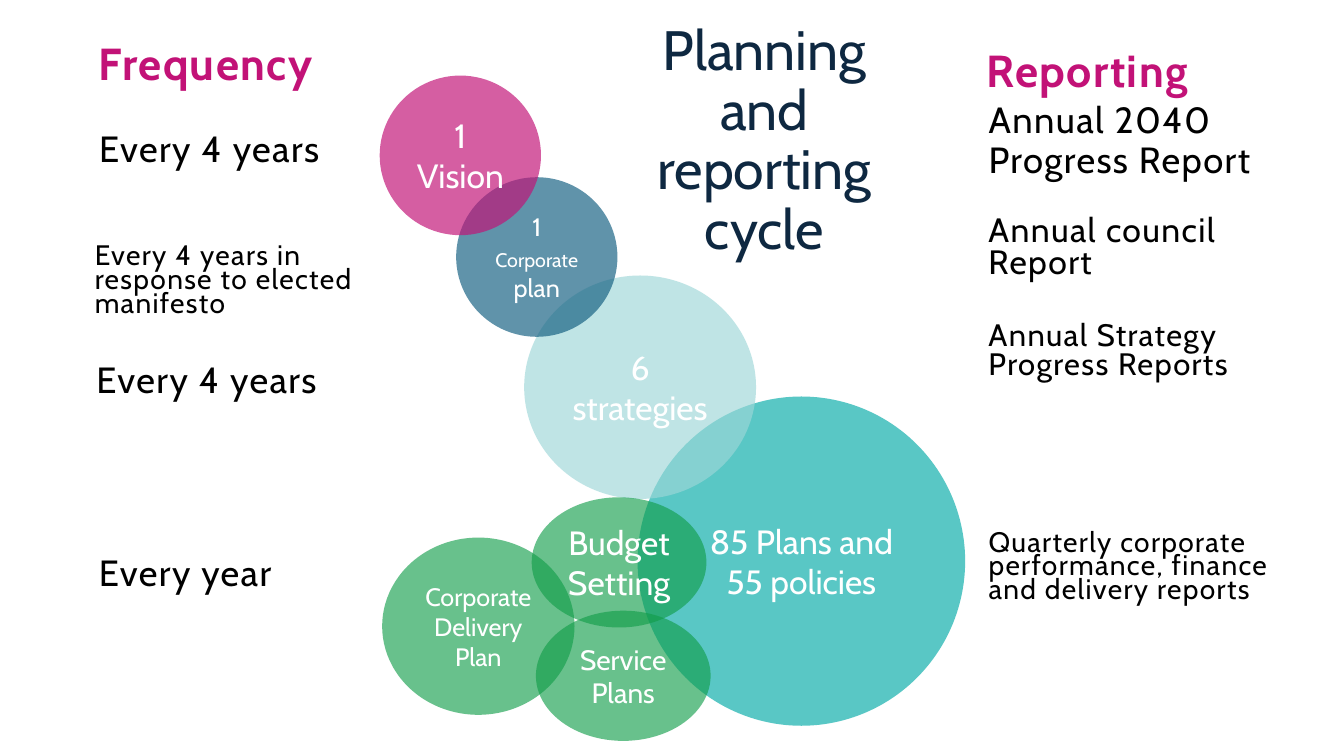
from lxml.etree import SubElement
from pptx import Presentation
from pptx.dml.color import RGBColor
from pptx.enum.shapes import MSO_SHAPE as Preset
from pptx.enum.text import MSO_ANCHOR as Anchor, MSO_AUTO_SIZE as AutoSize, PP_ALIGN as Align
from pptx.oxml.ns import qn
from pptx.util import Inches, Pt

COLORS = {
    "black": "000000", "white": "FFFFFF", "navy": "0E2841", "pink": "C21277",
    "blue": "156082", "pale": "9DD7D8", "teal": "00A9A6", "green": "119D49",
}
FONT = "Cabin"

presentation = Presentation()
presentation.slide_width = Inches(13.33)
presentation.slide_height = Inches(7.5)
column = presentation.slide_width / 160
row = presentation.slide_height / 90
slide = presentation.slides.add_slide(presentation.slide_layouts[1])


def grid_box(left, top, width, height):
    return [round(left * column), round(top * row), round(width * column), round(height * row)]


def write_runs(shape, runs, color, align, spacing=1, anchor=Anchor.TOP, tracking=0, bold=False):
    frame = shape.text_frame
    frame.word_wrap = True
    frame.auto_size = AutoSize.NONE
    frame.vertical_anchor = anchor
    paragraph = frame.paragraphs[0]
    paragraph.alignment = align
    paragraph.line_spacing = spacing
    paragraph.space_before = Pt(0)
    for text, size in runs:
        run = paragraph.add_run()
        run.text = text
        run.font.name = FONT
        run.font.size = Pt(size)
        run.font.bold = bold
        run.font.color.rgb = RGBColor.from_string(COLORS[color])
        if tracking:
            run.font._element.set("spc", str(tracking))


title = slide.shapes.title
title.left, title.top, title.width, title.height = grid_box(72.4, 3.6, 37.2, 26.6)
write_runs(title, [("Planning and reporting cycle", 39.6)], "navy", Align.CENTER, 0.9, Anchor.MIDDLE)

body = slide.placeholders[1]
body.left, body.top, body.width, body.height = grid_box(10.6, 15, 29.3, 7)
properties = body.text_frame.paragraphs[0]._p.get_or_add_pPr()
properties.set("marL", "0")
properties.set("indent", "0")
SubElement(properties, qn("a:buNone"))
write_runs(body, [("Every 4 years", 26)], "black", Align.LEFT, 0.9, tracking=100)

labels = [
    ("Frequency", 10.6, 4.4, 32.2, 11.3, 32, 0.9, "pink"),
    ("Every 4 years in response to elected manifesto", 10.1, 28.8, 34.9, 10, 20.1, 0.7, "black"),
    ("Every 4 years", 10.3, 42.5, 34.9, 10, 26, 0.9, "black"),
    ("Every year", 10.6, 65.5, 34.9, 10, 26, 0.9, "black"),
    ("Reporting", 116.3, 5.2, 32.2, 11.3, 32, 0.9, "pink"),
    ("Annual 2040 Progress Report", 116.5, 11.6, 39, 11.6, 26, 0.9, "black"),
    ("Annual council Report", 116.5, 25.2, 32.4, 9.4, 24.1, 0.8, "black"),
    ("Annual Strategy Progress Reports", 116.5, 37.8, 32.4, 9.4, 22.1, 0.8, "black"),
    ("Quarterly corporate performance, finance and delivery reports",
     116.5, 62.9, 39, 11.6, 20.1, 0.7, "black"),
]
for text, left, top, width, height, size, spacing, color in labels:
    label = slide.shapes.add_textbox(*grid_box(left, top, width, height))
    write_runs(label, [(text, size)], color, Align.LEFT, spacing,
               tracking=100, bold=color == "pink")

circles = [
    ([("85 Plans and 55 policies", 24)], 75.9, 47.2, 39, 39.2, "teal", 65),
    ([("6 strategies", 24)], 62.4, 32.8, 27.6, 26.6, "pale", 65),
    ([("1 ", 18), ("Corporate", 14), (" plan", 18)], 54.3, 21.1, 19.2, 19, "blue", 68),
    ([("1 Vision", 24)], 45.2, 9, 19.2, 19, "pink", 68),
    ([("Budget Setting", 24)], 63.3, 59.2, 20.8, 15.5, "green", 63),
    ([("Service Plans", 20)], 63.8, 72.7, 20.8, 15.5, "green", 63),
    ([("Corporate Delivery Plan", 18)], 45.5, 64, 22.9, 21.1, "green", 63),
]
for runs, left, top, width, height, color, opacity in circles:
    circle = slide.shapes.add_shape(Preset.OVAL, *grid_box(left, top, width, height))
    circle.shadow.inherit = False
    circle.line.fill.background()
    circle.fill.solid()
    circle.fill.fore_color.rgb = RGBColor.from_string(COLORS[color])
    fill_color = circle._element.spPr.find(qn("a:solidFill")).find(qn("a:srgbClr"))
    SubElement(fill_color, qn("a:alpha")).set("val", str(opacity * 1000))
    write_runs(circle, runs, "white", Align.CENTER, anchor=Anchor.MIDDLE)

presentation.save("out.pptx")
